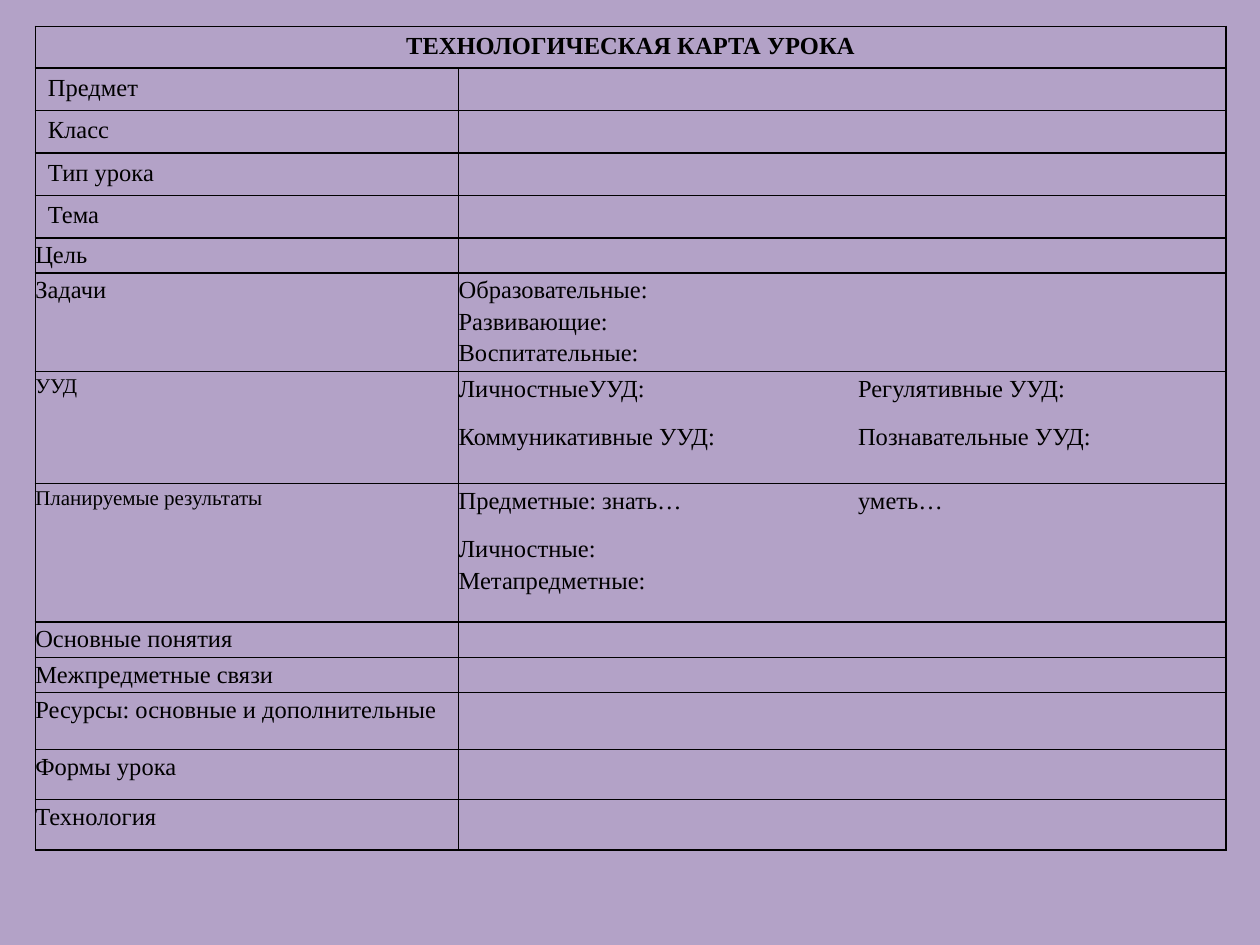
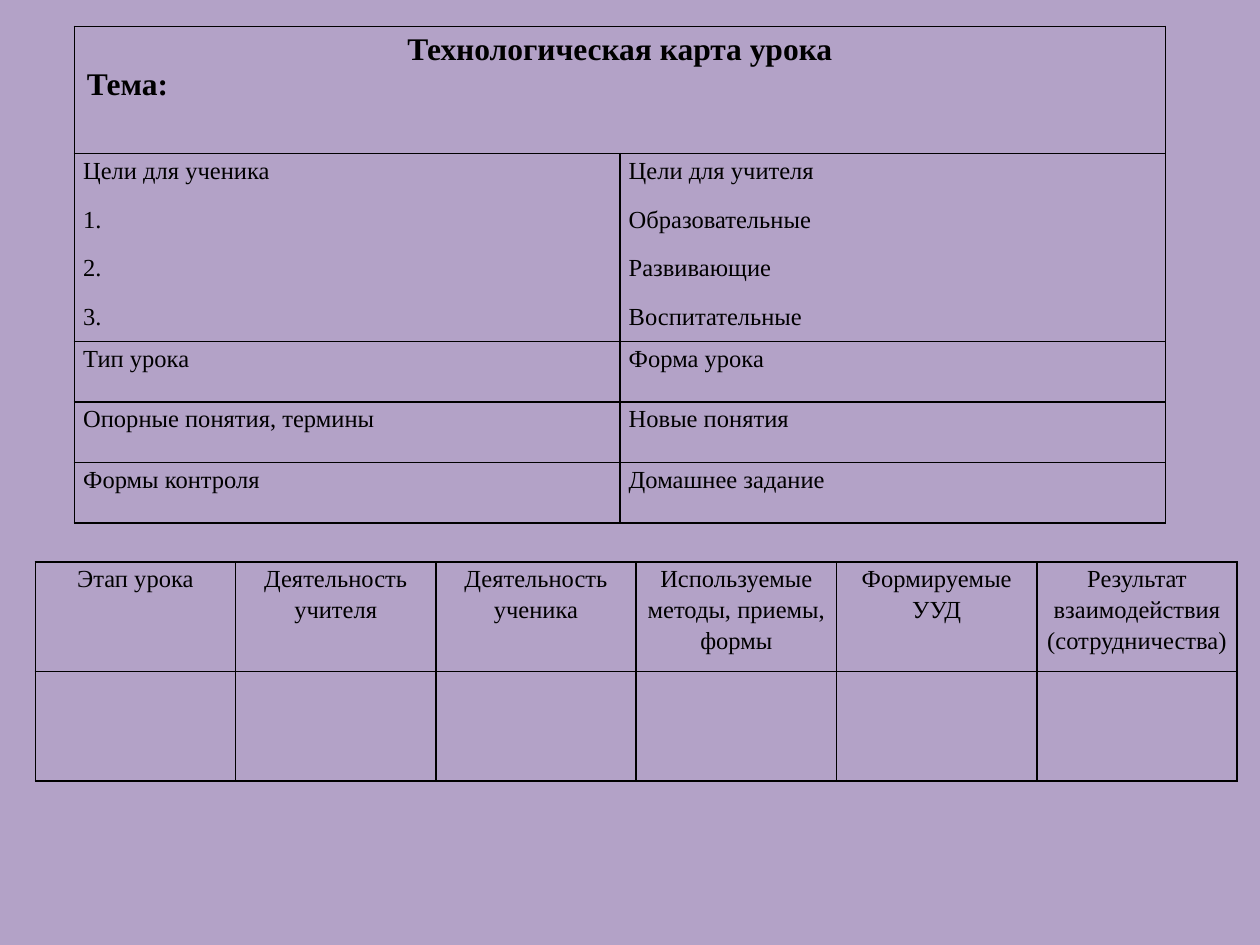
from lxml.etree import SubElement
from pptx import Presentation
from pptx.dml.color import RGBColor
from pptx.enum.text import PP_ALIGN
from pptx.oxml.ns import qn
from pptx.util import Inches, Pt

COLORS = {"background": "B3A2C7", "ink": "000000"}
FONT = "Times New Roman"
TEXT_SIZE = 14
SECOND_COLUMN_TAB = 3.17

# "\n" starts a paragraph, "\v" breaks a line, "\t" jumps to the tab stop
CARD_TITLE = "ТЕХНОЛОГИЧЕСКАЯ КАРТА УРОКА"
CARD_HEADER_ROWS = ["Предмет", "Класс", "Тип урока", "Тема"]
CARD_DETAIL_ROWS = [
    ("Цель", "", 0.28),
    ("Задачи", "Образовательные:\vРазвивающие:\vВоспитательные:", 0.78),
    ("УУД", "ЛичностныеУУД:\tРегулятивные УУД:\n"
            "Коммуникативные УУД:\tПознавательные УУД:", 0.89),
    ("Планируемые результаты",
     "Предметные: знать…\tуметь…\nЛичностные:\vМетапредметные:", 1.1),
    ("Основные понятия", "", 0.28),
    ("Межпредметные связи", "", 0.28),
    ("Ресурсы: основные и дополнительные", "", 0.45),
    ("Формы урока", "", 0.4),
    ("Технология", "", 0.4),
]
SMALL_LABELS = {"УУД": 12, "Планируемые результаты": 12}

PLAN_TITLE = "Технологическая карта урока\nТема:"
PLAN_ROWS = [
    ("Цели для ученика\n1.\n2.\n3.",
     "Цели для учителя\nОбразовательные\nРазвивающие\nВоспитательные", 1.49),
    ("Тип урока", "Форма урока", 0.48),
    ("Опорные понятия, термины", "Новые понятия", 0.48),
    ("Формы контроля", "Домашнее задание", 0.48),
]
STAGE_HEADINGS = [
    "Этап урока", "Деятельность учителя", "Деятельность ученика",
    "Используемые методы, приемы, формы", "Формируемые УУД",
    "Результат взаимодействия (сотрудничества)",
]


def add_slide(presentation):
    slide = presentation.slides.add_slide(presentation.slide_layouts[6])
    fill = slide.background.fill
    fill.solid()
    fill.fore_color.rgb = RGBColor.from_string(COLORS["background"])
    return slide


def outline_cell(cell):
    properties = cell._tc.get_or_add_tcPr()
    for side in ("a:lnL", "a:lnR", "a:lnT", "a:lnB"):
        line = SubElement(properties, qn(side), w=str(Pt(1)))
        line_fill = SubElement(line, qn("a:solidFill"))
        SubElement(line_fill, qn("a:srgbClr"), val=COLORS["ink"])
    cell.fill.background()


def add_grid(slide, left, top, widths, heights):
    table = slide.shapes.add_table(
        len(heights), len(widths), Inches(left), Inches(top),
        Inches(sum(widths)), Inches(sum(heights))).table
    table.first_row = table.horz_banding = False
    for column, width in zip(table.columns, widths):
        column.width = Inches(width)
    for row, height in zip(table.rows, heights):
        row.height = Inches(height)
    for cell in table.iter_cells():
        outline_cell(cell)
    return table


def add_tab_stop(paragraph, position):
    tabs = SubElement(paragraph._p.get_or_add_pPr(), qn("a:tabLst"))
    SubElement(tabs, qn("a:tab"), pos=str(Inches(position)), algn="l")


def write_cell(cell, text, size=TEXT_SIZE, bold=False, align=PP_ALIGN.LEFT,
               side_inset=None):
    cell.text_frame.text = text
    if side_inset is not None:
        cell.margin_left = cell.margin_right = Inches(side_inset)
        cell.margin_top = cell.margin_bottom = 0
    for paragraph in cell.text_frame.paragraphs:
        paragraph.alignment = align
        if side_inset is not None:
            paragraph.line_spacing = 1.15
            paragraph.space_after = Pt(10)
        if "\t" in paragraph.text:
            add_tab_stop(paragraph, SECOND_COLUMN_TAB)
        for run in paragraph.runs:
            run.font.name = FONT
            run.font.size = Pt(size)
            run.font.bold = bold
            run.font.color.rgb = RGBColor.from_string(COLORS["ink"])
        if not paragraph.runs:
            SubElement(paragraph._p, qn("a:endParaRPr"), sz=str(size * 100))


def write_title(table, text, size):
    title_cell = table.cell(0, 0)
    title_cell.merge(table.cell(0, 1))
    write_cell(title_cell, text, size, bold=True)
    title_cell.text_frame.paragraphs[0].alignment = PP_ALIGN.CENTER


def build_card_slide(presentation):
    header_count = 1 + len(CARD_HEADER_ROWS)
    heights = [0.33] * header_count + [row[2] for row in CARD_DETAIL_ROWS]
    table = add_grid(add_slide(presentation), 0.28, 0.21, [3.36, 6.09], heights)
    write_title(table, CARD_TITLE, TEXT_SIZE)
    for row, label in enumerate(CARD_HEADER_ROWS, 1):
        write_cell(table.cell(row, 0), label)
        write_cell(table.cell(row, 1), "")
    for row, (label, content, _) in enumerate(CARD_DETAIL_ROWS, header_count):
        write_cell(table.cell(row, 0), label,
                   SMALL_LABELS.get(label, TEXT_SIZE), side_inset=0)
        write_cell(table.cell(row, 1), content, side_inset=0)


def build_plan_slide(presentation):
    slide = add_slide(presentation)
    heights = [1.01] + [row[2] for row in PLAN_ROWS]
    plan = add_grid(slide, 0.59, 0.21, [4.33] * 2, heights)
    write_title(plan, PLAN_TITLE, 18)
    for row, (*texts, _) in enumerate(PLAN_ROWS, 1):
        for column, text in enumerate(texts):
            write_cell(plan.cell(row, column), text,
                       align=PP_ALIGN.JUSTIFY, side_inset=0.07)

    stages = add_grid(slide, 0.28, 4.46, [1.59] * len(STAGE_HEADINGS), [0.87] * 2)
    for column, heading in enumerate(STAGE_HEADINGS):
        for row, text in enumerate((heading, "")):
            write_cell(stages.cell(row, column), text,
                       align=PP_ALIGN.CENTER, side_inset=0.07)


def main():
    presentation = Presentation()
    presentation.slide_width = Inches(10)
    presentation.slide_height = Inches(7.5)
    build_card_slide(presentation)
    build_plan_slide(presentation)
    presentation.save("out.pptx")


if __name__ == "__main__":
    main()
